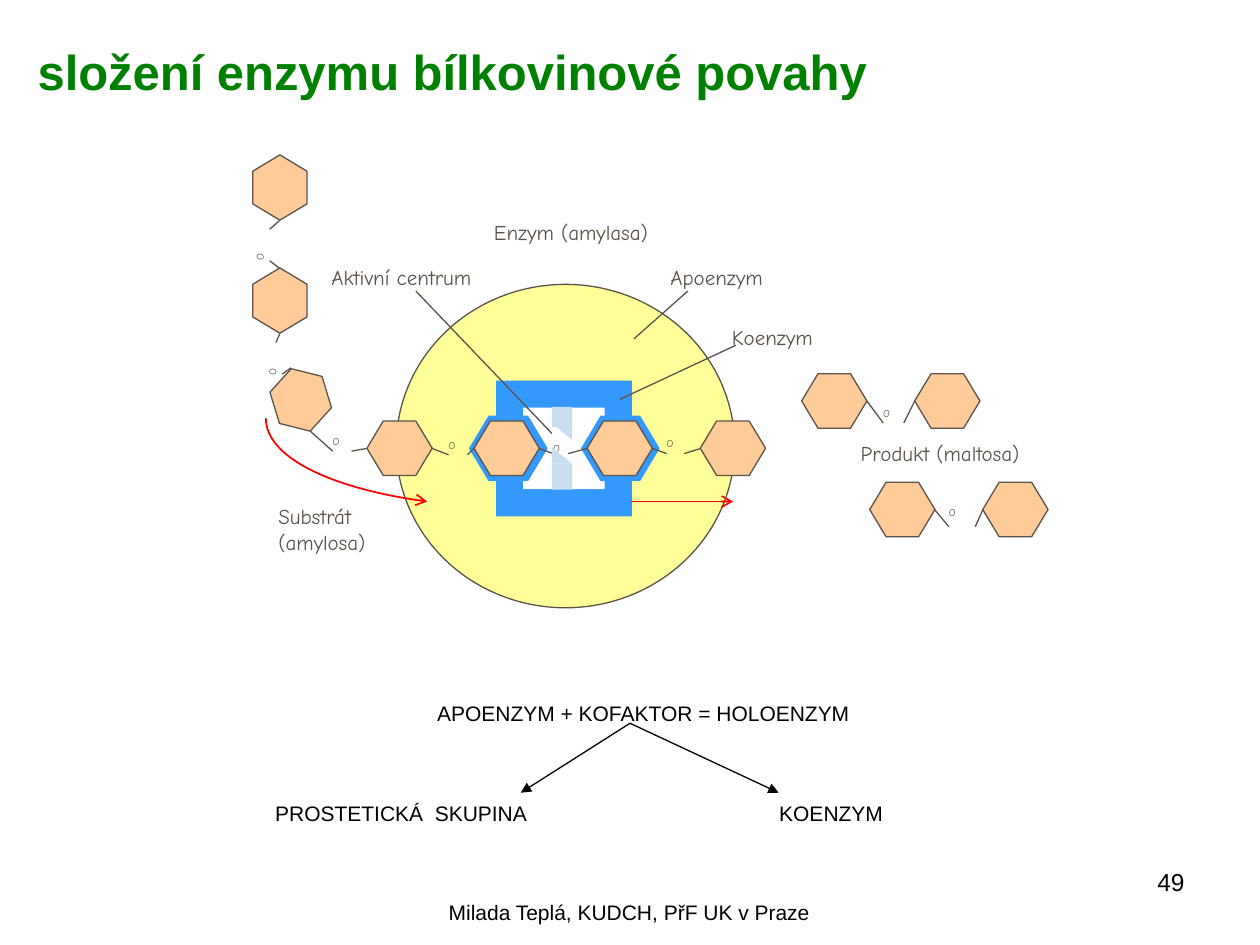
from lxml.etree import SubElement
from pptx import Presentation
from pptx.dml.color import RGBColor
from pptx.enum.shapes import MSO_CONNECTOR, MSO_SHAPE
from pptx.enum.text import MSO_ANCHOR, PP_ALIGN
from pptx.oxml.ns import qn
from pptx.util import Pt


def tint(code):
    return RGBColor.from_string(code)


class Sketch:
    sans, comic = "Arial", "Comic Neue"
    black, green, ink, red = "000000", "008000", "5B5249", "FF0000"
    peach, yellow, blue = "FFCC99", "FFFF99", "3399FF"
    pale, white = "C9DDF1", "FFFFFF"
    thin = 0.75

    def __init__(self, slide):
        self.slide = slide
        self.shapes = slide.shapes

    def shape(self, kind, x, y, w, h, fill, line=None, turn=0):
        item = self.shapes.add_shape(kind, Pt(x), Pt(y), Pt(w), Pt(h))
        item.shadow.inherit = False
        item.rotation = turn
        item.fill.solid()
        item.fill.fore_color.rgb = tint(fill)
        if line:
            item.line.color.rgb = tint(line)
            item.line.width = Pt(self.thin)
        else:
            item.line.fill.background()
        return item

    def ring(self, x, y, turn=0):
        item = self.shape(MSO_SHAPE.HEXAGON, x, y, 37.3, 31.1,
                          self.peach, self.ink, turn)
        item.adjustments[0] = 0.3

    def text(self, lines, x, y, w, h, size=12, color=black, font=sans, bold=False,
             align=PP_ALIGN.LEFT, anchor=MSO_ANCHOR.TOP, pad=(7.2, 3.6), turn=0):
        box = self.shapes.add_textbox(Pt(x), Pt(y), Pt(w), Pt(h))
        box.rotation = turn
        frame = box.text_frame
        frame.word_wrap = True
        frame.vertical_anchor = anchor
        frame.margin_left = frame.margin_right = Pt(pad[0])
        frame.margin_top = frame.margin_bottom = Pt(pad[1])
        for i, line in enumerate(lines):
            para = frame.add_paragraph() if i else frame.paragraphs[0]
            para.alignment = align
            run = para.add_run()
            run.text = line
            run.font.name = font
            run.font.size = Pt(size)
            run.font.bold = bold
            run.font.color.rgb = tint(color)
        return box

    def label(self, lines, x, y, w, h):
        self.text(lines, x, y, w, h, color=self.ink, font=self.comic, pad=(2.9, 1.4))

    def atom(self, x, y, w=12, h=18, turn=0):
        self.text(["O"], x, y, w, h, size=6, color=self.ink, font=self.comic,
                  pad=(0, 0), turn=turn)

    def stroke(self, item, color, width, head):
        item.line.color.rgb = tint(color)
        item.line.width = Pt(width)
        if head:
            SubElement(item.line._get_or_add_ln(), qn("a:tailEnd"), type=head)

    def line(self, x1, y1, x2, y2, color=ink, width=thin, head=None):
        item = self.shapes.add_connector(
            MSO_CONNECTOR.STRAIGHT, Pt(x1), Pt(y1), Pt(x2), Pt(y2))
        self.stroke(item, color, width, head)
        SubElement(item._element.spPr, qn("a:effectLst"))

    def curve(self, points, color, width, head):
        first, *rest = [(Pt(x), Pt(y)) for x, y in points]
        pen = self.shapes.build_freeform(*first)
        pen.add_line_segments(rest, close=False)
        item = pen.convert_to_shape()
        item.shadow.inherit = False
        item.fill.background()
        self.stroke(item, color, width, head)
        track = item._element.find(".//" + qn("a:path"))
        bend = SubElement(track, qn("a:cubicBezTo"))
        for step in track.findall(qn("a:lnTo")):
            bend.append(step[0])
            track.remove(step)


def main():
    deck = Presentation()
    deck.slide_width, deck.slide_height = Pt(720), Pt(540)
    art = Sketch(deck.slides.add_slide(deck.slide_layouts[6]))

    art.text(["Milada Teplá, KUDCH, PřF UK v Praze"], 212.4, 510.5, 294.5, 26,
             align=PP_ALIGN.CENTER)
    art.text(["49"], 516.2, 491.8, 167.8, 37.4, size=14, align=PP_ALIGN.RIGHT)
    art.text(["složení enzymu bílkovinové povahy"], 14.4, 20.2, 674.6, 41,
             size=28, color=art.green, bold=True)

    art.shape(MSO_SHAPE.OVAL, 226.4, 162.5, 193.4, 184.8, art.yellow, art.ink)
    art.shape(MSO_SHAPE.RECTANGLE, 283.5, 217.5, 77.6, 77.6, art.blue)
    art.shape(MSO_SHAPE.RECTANGLE, 299, 233, 46.6, 46.6, art.white)
    for x in (268, 332):
        pocket = art.shape(MSO_SHAPE.HEXAGON, x, 237.5, 45, 37.5, art.blue)
        pocket.adjustments[0] = 0.3

    for x in (209.7, 270.9, 335.5, 400.2):
        art.ring(x, 240.6)
    for x, y in ((458.1, 213.6), (497, 275.6)):
        art.ring(x, y)
        art.ring(x + 64.6, y)
    for x, y, turn in ((141.3, 91.6, 270), (141.3, 156.2, 270), (153.2, 213, 73.1)):
        art.ring(x, y, turn)

    for x, y in ((316.1, 252.7), (380.9, 249.8), (504.7, 232.6),
                 (542.2, 289.4), (190.1, 248.4), (256.3, 250.6)):
        art.atom(x, y)
    art.atom(144.7, 131, 18, 18, 270)
    art.atom(149.8, 195.1, 18.7, 18, 257.2)

    bonds = (
        (324.7, 259.2, 335.5, 256.3), (308.2, 256.3, 316.1, 259.2),
        (391, 259.2, 400.3, 256.3), (373, 256.3, 380.9, 259.2),
        (516.5, 241.7, 522.7, 229.2), (495.4, 229.2, 504.7, 241.7),
        (557.3, 301, 561.6, 291.4), (534.2, 291.4, 542.2, 301),
        (200.9, 257.8, 209.5, 256.3), (177.1, 246.2, 190.1, 257.8),
        (267.1, 259.9, 270.7, 256.3), (247, 256.3, 256.3, 259.9),
        (154.1, 131, 159.8, 126), (159.8, 153.4, 154.1, 149),
        (159.8, 190.8, 157.7, 195.8), (166.3, 210.2, 161.3, 213.8),
    )
    for bond in bonds:
        art.line(*bond)

    art.curve(((151.9, 239), (151.9, 260.6), (189.4, 279.4), (244.1, 286.6)),
              art.red, 1, "arrow")
    for kind, y, h, turn in ((MSO_SHAPE.RECTANGLE, 265, 14.8, 0),
                             (MSO_SHAPE.RIGHT_TRIANGLE, 255.7, 9.3, 0),
                             (MSO_SHAPE.RECTANGLE, 232.5, 11.5, 180),
                             (MSO_SHAPE.RIGHT_TRIANGLE, 242, 9.3, 180)):
        art.shape(kind, 315.4, y, 11.5, h, art.pale, turn=turn)
    art.line(360.7, 286.6, 419, 286.6, art.red, 1, "arrow")

    for lines, x, y, w, h in (
        (["Enzym (amylasa)"], 279.4, 123.8, 110.9, 41.8),
        (["Aktivní centrum"], 186.5, 149.8, 108.7, 41.8),
        (["Apoenzym"], 380.2, 149.8, 72.7, 41.8),
        (["Koenzym"], 415.4, 184.3, 64.1, 41.8),
        (["Produkt (maltosa)"], 488.9, 250.6, 120.2, 33.8),
        (["Substrát", "(amylosa)"], 156.2, 286.6, 68.4, 59.8),
    ):
        art.label(lines, x, y, w, h)
    for guide in ((315.4, 247.7, 237.6, 166.3), (362.2, 193.7, 393.1, 166.3),
                  (354.2, 228.2, 420.5, 197.3)):
        art.line(*guide)

    total = art.text(["APOENZYM + KOFAKTOR = HOLOENZYM"], 207.4, 396.7, 287.3, 43.2)
    total.text_frame.margin_right = 0
    total.text_frame.paragraphs[0]._p.get_or_add_pPr().set("indent", str(Pt(35.3)))
    parts = art.text(["PROSTETICKÁ  SKUPINA\tKOENZYM"], 150.2, 432, 362.2, 64.8,
                     anchor=MSO_ANCHOR.MIDDLE)
    stops = SubElement(parts.text_frame.paragraphs[0]._p.get_or_add_pPr(),
                       qn("a:tabLst"))
    SubElement(stops, qn("a:tab"), pos=str(Pt(288)), algn="l")
    for x in (297.6, 445):
        art.line(360, 413.3, x, 453, art.black, head="triangle")

    deck.save("out.pptx")


if __name__ == "__main__":
    main()
